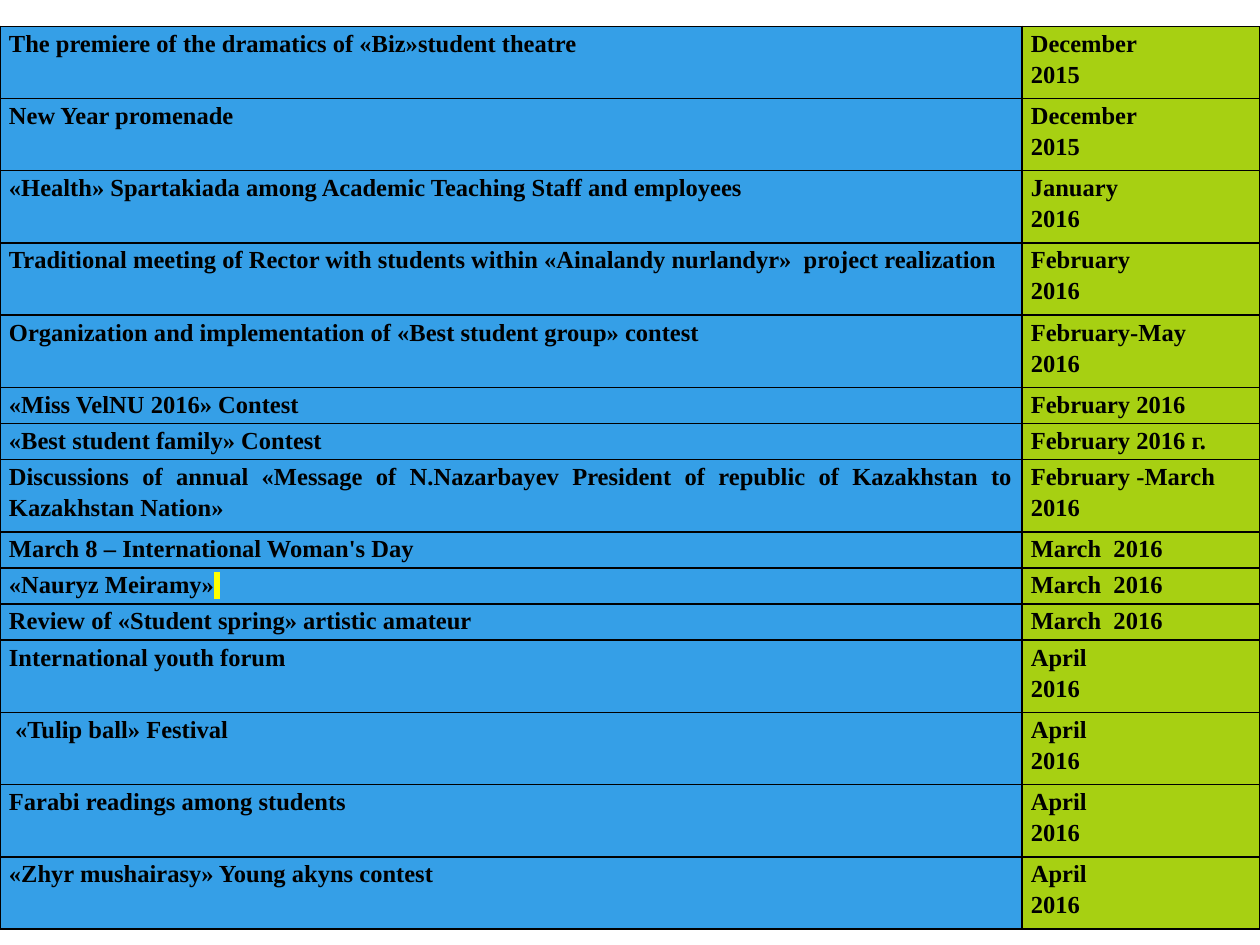
"""Build a slide with the schedule of student events."""
from dataclasses import dataclass

from lxml import etree
from pptx import Presentation
from pptx.dml.color import RGBColor
from pptx.enum.text import PP_ALIGN
from pptx.oxml.ns import qn
from pptx.util import Cm, Pt

LEFT = PP_ALIGN.LEFT
JUSTIFY = PP_ALIGN.JUSTIFY
COLORS = {
    "event": "359FE7",
    "date": "A7D012",
    "ink": "000000",
    "marker": "FFFF00",
}
FONT = "Times New Roman"
BLANK_LAYOUT = 6
SLIDE_WIDTH, SLIDE_HEIGHT = Cm(25.4), Cm(19.05)
SCHEDULE_TOP, SCHEDULE_HEIGHT = Cm(0.53), Cm(18.21)
EVENT_WIDTH = Cm(20.6)
SIDE_MARGIN = Cm(0.18)


@dataclass(frozen=True)
class Event:
    """One row of the schedule, with an optional highlighted ending."""

    name: str
    date: str
    lines: int = 2
    marked: str = ""


EVENTS = [
    Event("The premiere of the dramatics of «Biz»student theatre", "December\n2015"),
    Event("New Year promenade", "December\n2015"),
    Event("«Health» Spartakiada among Academic Teaching Staff and employees", "January\n2016"),
    Event("Traditional meeting of Rector with students within «Ainalandy nurlandyr»  project realization",
          "February\n2016"),
    Event("Organization and implementation of «Best student group» contest", "February-May\n2016"),
    Event("«Miss VelNU 2016» Contest", "February 2016", lines=1),
    Event("«Best student family» Contest", "February 2016 г.", lines=1),
    Event("Discussions of annual «Message of N.Nazarbayev President of republic of Kazakhstan to Kazakhstan Nation»",
          "February -March\n2016"),
    Event("March 8 – International Woman's Day", "March  2016", lines=1),
    Event("«Nauryz Meiramy»", "March  2016", lines=1, marked=" "),
    Event("Review of «Student spring» artistic amateur", "March  2016", lines=1),
    Event("International youth forum", "April\n2016"),
    Event(" «Tulip ball» Festival", "April\n2016"),
    Event("Farabi readings among students", "April\n2016"),
    Event("«Zhyr mushairasy» Young akyns contest", "April\n2016"),
]


def add_text(paragraph, text: str, *, size: float = 14, bold: bool = True,
             color: str = "ink", highlight: str = "") -> None:
    """Append a formatted run to a paragraph."""
    run = paragraph.add_run()
    run.text = text
    run.font.size = Pt(size)
    run.font.bold = bold
    run.font.name = FONT
    run.font.color.rgb = RGBColor.from_string(COLORS[color])
    if highlight:
        marker = etree.Element(qn("a:highlight"))
        etree.SubElement(marker, qn("a:srgbClr"), val=COLORS[highlight])
        run.font._element.find(qn("a:latin")).addprevious(marker)


def add_borders(cell, color: str = "ink", width: float = 1) -> None:
    """Draw a solid line on all four sides of a cell."""
    properties = cell._tc.get_or_add_tcPr()
    for position, side in enumerate(("lnL", "lnR", "lnT", "lnB")):
        border = etree.Element(qn(f"a:{side}"), w=str(Pt(width)))
        line_fill = etree.SubElement(border, qn("a:solidFill"))
        etree.SubElement(line_fill, qn("a:srgbClr"), val=COLORS[color])
        properties.insert(position, border)


def fill_cell(cell, text: str, *, fill: str, align: PP_ALIGN, marked: str = "") -> None:
    """Write the lines of a cell and format its box."""
    cell.fill.solid()
    cell.fill.fore_color.rgb = RGBColor.from_string(COLORS[fill])
    cell.margin_left = cell.margin_right = SIDE_MARGIN
    cell.margin_top = cell.margin_bottom = 0
    add_borders(cell)
    frame = cell.text_frame
    for index, line in enumerate(text.split("\n")):
        paragraph = frame.add_paragraph() if index else frame.paragraphs[0]
        paragraph.alignment = align
        paragraph.line_spacing = 1.15
        add_text(paragraph, line)
    if marked:
        add_text(paragraph, marked, highlight="marker")


def add_schedule(slide, events: list[Event]) -> None:
    """Add the table of events, with row heights in proportion to their lines."""
    schedule = slide.shapes.add_table(
        len(events), 2, 0, SCHEDULE_TOP, SLIDE_WIDTH, SCHEDULE_HEIGHT).table
    schedule.first_row = schedule.horz_banding = False
    schedule.columns[0].width = EVENT_WIDTH
    schedule.columns[1].width = SLIDE_WIDTH - EVENT_WIDTH
    line_height = SCHEDULE_HEIGHT // sum(event.lines for event in events)
    for row, event in enumerate(events):
        schedule.rows[row].height = line_height * event.lines
        fill_cell(schedule.cell(row, 0), event.name, fill="event", align=JUSTIFY, marked=event.marked)
        fill_cell(schedule.cell(row, 1), event.date, fill="date", align=LEFT)


def main() -> None:
    """Create and save the presentation."""
    presentation = Presentation()
    presentation.slide_width, presentation.slide_height = SLIDE_WIDTH, SLIDE_HEIGHT
    slide = presentation.slides.add_slide(presentation.slide_layouts[BLANK_LAYOUT])
    add_schedule(slide, EVENTS)
    presentation.save("out.pptx")


if __name__ == "__main__":
    main()
